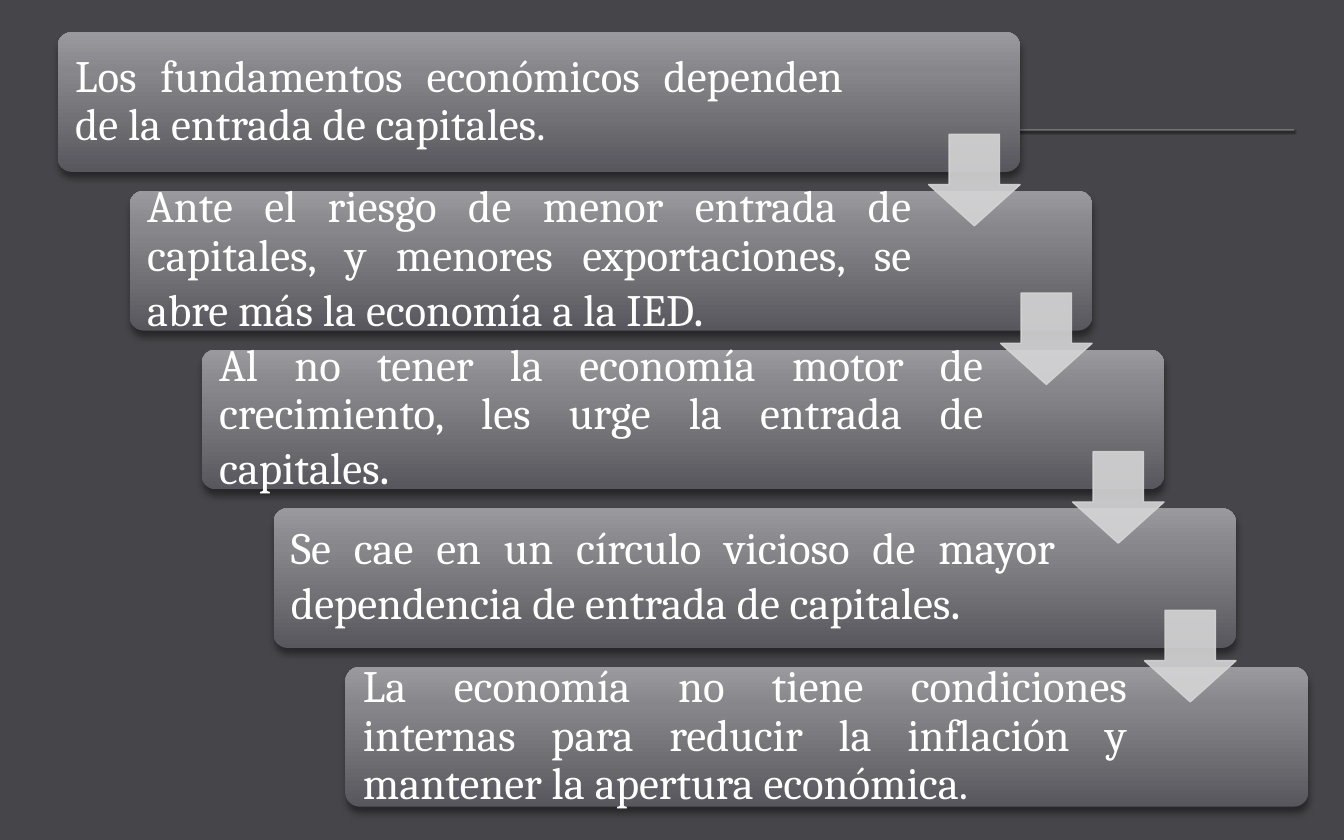
from copy import deepcopy
from typing import NamedTuple

from lxml import etree
from pptx import Presentation
from pptx.dml.color import RGBColor
from pptx.enum.shapes import MSO_SHAPE
from pptx.enum.text import MSO_ANCHOR, PP_ALIGN
from pptx.oxml.ns import qn
from pptx.util import Cm, Pt

RECT = MSO_SHAPE.RECTANGLE
ROUNDED = MSO_SHAPE.ROUNDED_RECTANGLE
DOWN_ARROW = MSO_SHAPE.DOWN_ARROW
MIDDLE = MSO_ANCHOR.MIDDLE
JUSTIFY = PP_ALIGN.JUSTIFY

BACKGROUND = RGBColor(0x46, 0x46, 0x4A)
RULE = RGBColor(0x6F, 0x6F, 0x74)
ARROW = RGBColor(0xD5, 0xD5, 0xD6)
WHITE = RGBColor(0xFF, 0xFF, 0xFF)
GRADIENT = (
    (0, RGBColor(0x57, 0x57, 0x5D)),
    (0.72, RGBColor(0x87, 0x87, 0x8B)),
    (1, RGBColor(0x9A, 0x9A, 0x9E)),
)

LEFT, TOP = 1.09, 0.61
STEP_X, STEP_Y = 1.36, 3.0
BOX_W, BOX_H = 18.19, 2.64
PAD = 0.08
ARROW_SIZE, ARROW_DROP = 1.73, 1.93


class Step(NamedTuple):
    text: str
    large_end: str = ""
    text_w: float = 14.94


class Shadow(NamedTuple):
    alpha: int
    blur: float
    dist: float


RULE_SHADOW = Shadow(75, 1, 1)
BOX_SHADOW = Shadow(43, 4, 3)

STEPS = (
    Step("Los fundamentos económicos dependen de la entrada de capitales.", text_w=15.01),
    Step("Ante el riesgo de menor entrada de capitales, y menores exportaciones, "
         "se abre más la economía a la IED", "."),
    Step("Al no tener la economía motor de crecimiento, les urge la entrada de capitales", "."),
    Step("Se cae en un círculo vicioso de mayor dependencia de entrada de capitales", "."),
    Step("La economía no tiene condiciones internas para reducir la inflación "
         "y mantener la apertura económica."),
)


def set_attrs(target, values: dict) -> None:
    for name, value in values.items():
        setattr(target, name, value)


def add_alpha(color, percent: int) -> None:
    etree.SubElement(color, qn("a:alpha"), val=str(percent * 1000))


def add_shape(s, kind, x: float, y: float, w: float, h: float, adjustments=()):
    sp = s.shapes.add_shape(kind, Cm(x), Cm(y), Cm(w), Cm(h))
    sp.shadow.inherit = False
    sp.line.fill.background()
    for i, value in enumerate(adjustments):
        sp.adjustments[i] = value
    return sp


def add_shadow(sp, shadow: Shadow) -> None:
    effects = sp._element.spPr.find(qn("a:effectLst"))
    outer = etree.SubElement(
        effects, qn("a:outerShdw"), blurRad=str(Pt(shadow.blur)),
        dist=str(Pt(shadow.dist)), dir="5400000", algn="ctr", rotWithShape="0")
    add_alpha(etree.SubElement(outer, qn("a:srgbClr"), val="000000"), shadow.alpha)


def add_rule(s) -> None:
    sp = add_shape(s, RECT, 14.05, 2.44, 10.41, 0.03)
    sp.fill.solid()
    sp.fill.fore_color.rgb = RULE
    add_shadow(sp, RULE_SHADOW)


def add_box(s, x: float, y: float) -> None:
    sp = add_shape(s, ROUNDED, x, y, BOX_W, BOX_H, (0.1,))
    sp.fill.gradient()
    sp.fill.gradient_angle = 90
    stops = sp._element.spPr.find(".//" + qn("a:gsLst"))
    stops.append(deepcopy(stops[0]))
    for stop, (position, color) in zip(sp.fill.gradient_stops, GRADIENT):
        stop.position = position
        stop.color.rgb = color
    add_shadow(sp, BOX_SHADOW)


def add_text(s, x: float, y: float, step: Step) -> None:
    sp = s.shapes.add_textbox(Cm(x + PAD), Cm(y + PAD), Cm(step.text_w), Cm(BOX_H - 2 * PAD))
    tf = sp.text_frame
    sides = ("left", "top", "right", "bottom")
    set_attrs(tf, {"word_wrap": True, "vertical_anchor": MIDDLE,
                   **{f"margin_{side}": Cm(0.25) for side in sides}})
    p = tf.paragraphs[0]
    set_attrs(p, {"alignment": JUSTIFY, "line_spacing": 0.9})
    for text, size in ((step.text, 24), (step.large_end, 28)):
        if text:
            r = p.add_run()
            r.text = text
            set_attrs(r.font, {"name": "Cambria", "size": Pt(size)})
            r.font.color.rgb = WHITE


def add_arrow(s, x: float, y: float) -> None:
    sp = add_shape(s, DOWN_ARROW, x + BOX_W - ARROW_SIZE, y + ARROW_DROP,
                   ARROW_SIZE, ARROW_SIZE, (0.55, 0.45))
    for fill in (sp.fill, sp.line.fill):
        fill.solid()
        fill.fore_color.rgb = ARROW
    sp.line.width = Pt(0.75)
    for color in sp._element.spPr.iter(qn("a:srgbClr")):
        add_alpha(color, 90)


def main() -> None:
    """Build the slide with the staircase of economic dependence."""
    prs = Presentation()
    set_attrs(prs, {"slide_width": Cm(25.4), "slide_height": Cm(15.88)})
    s = prs.slides.add_slide(prs.slide_layouts[6])
    s.background.fill.solid()
    s.background.fill.fore_color.rgb = BACKGROUND
    add_rule(s)
    corners = [(LEFT + i * STEP_X, TOP + i * STEP_Y) for i in range(len(STEPS))]
    for (x, y), step in zip(corners, STEPS):
        add_box(s, x, y)
        add_text(s, x, y, step)
    for x, y in corners[:-1]:
        add_arrow(s, x, y)
    prs.save("out.pptx")


if __name__ == "__main__":
    main()
